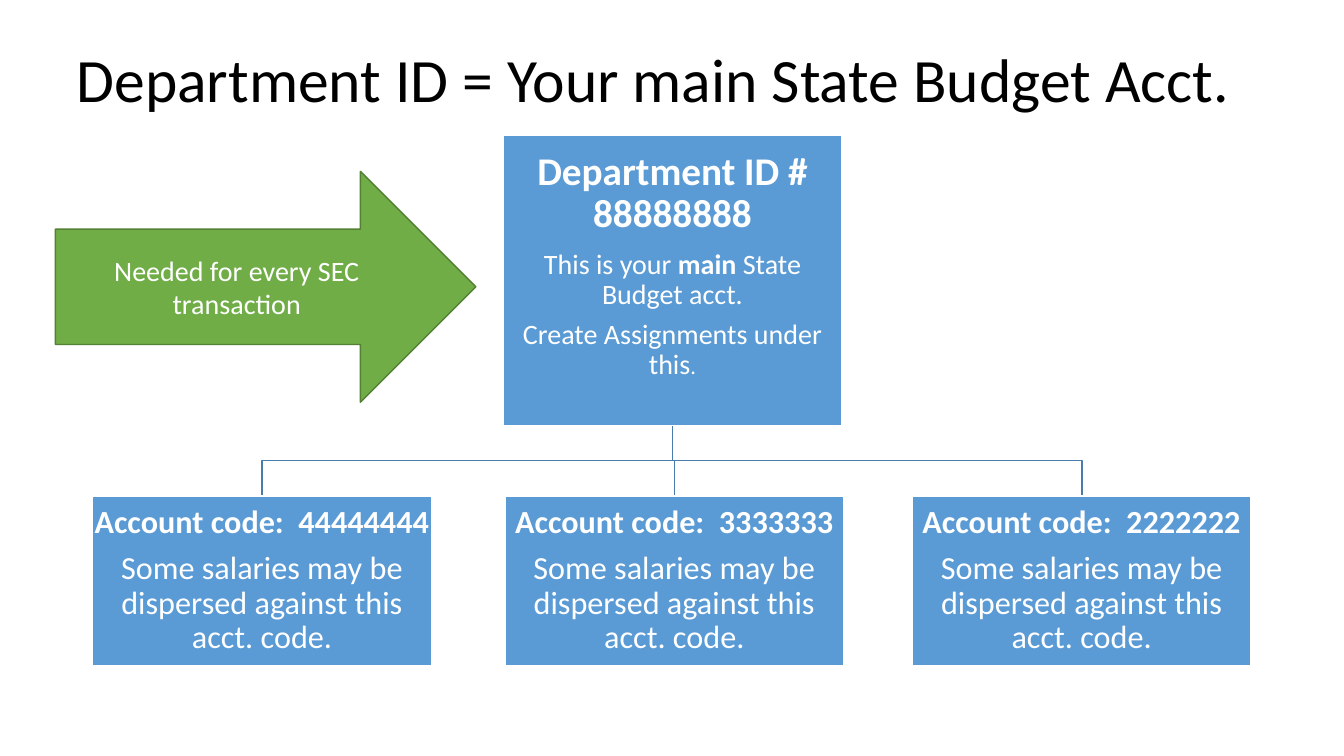
from pptx import Presentation
from pptx.dml.color import RGBColor
from pptx.enum.shapes import MSO_SHAPE as SHAPE
from pptx.enum.text import MSO_ANCHOR as ANCHOR, MSO_AUTO_SIZE as AUTO, PP_ALIGN as ALIGN
from pptx.util import Inches, Pt

BLACK = RGBColor(0x00, 0x00, 0x00)
WHITE = RGBColor(0xFF, 0xFF, 0xFF)
BLUE = RGBColor(0x5B, 0x9B, 0xD5)
LINK_BLUE = RGBColor(0x49, 0x7C, 0xAB)
GREEN = RGBColor(0x70, 0xAD, 0x47)
DARK_GREEN = RGBColor(0x53, 0x80, 0x35)

BOX_W = 3.36
ROOT_X, ROOT_Y, ROOT_H = 4.99, 1.34, 2.88
ACCOUNT_Y, ACCOUNT_H = 4.92, 1.68
ACCOUNTS = [(0.92, "44444444"), (5.01, "3333333"), (9.05, "2222222")]


class SlideBuilder:
    font = "Calibri"

    def __init__(self, prs):
        self.slide = prs.slides.add_slide(prs.slide_layouts[5])

    def style(self, p, size, color, align, bold=None):
        p.alignment = align
        p.font.name = self.font
        p.font.size = Pt(size)
        p.font.color.rgb = color
        p.font.bold = bold

    def title(self, text, x, y, w, h):
        sp = self.slide.shapes.title
        sp.left, sp.top, sp.width, sp.height = map(Inches, (x, y, w, h))
        tf = sp.text_frame
        tf.text = text
        tf.auto_size = AUTO.NONE
        tf.vertical_anchor = ANCHOR.MIDDLE
        p = tf.paragraphs[0]
        self.style(p, 44, BLACK, ALIGN.LEFT)
        p.line_spacing = 0.9

    def shape(self, kind, x, y, w, h, fill, line):
        sp = self.slide.shapes.add_shape(kind, *map(Inches, (x, y, w, h)))
        sp.shadow.inherit = False
        sp.fill.solid()
        sp.fill.fore_color.rgb = fill
        sp.line.color.rgb = line
        sp.line.width = Pt(1)
        sp.text_frame.word_wrap = True
        sp.text_frame.vertical_anchor = ANCHOR.MIDDLE
        return sp

    def arrow(self, text, x, y, w, h):
        sp = self.shape(SHAPE.RIGHT_ARROW, x, y, w, h, GREEN, DARK_GREEN)
        sp.text_frame.text = text
        self.style(sp.text_frame.paragraphs[0], 20, WHITE, ALIGN.CENTER)

    def box(self, x, y, h, paragraphs, bottom=0.02):
        tf = self.shape(SHAPE.RECTANGLE, x, y, BOX_W, h, BLUE, WHITE).text_frame
        tf.margin_left = tf.margin_right = 0
        tf.margin_top = Inches(0.02)
        tf.margin_bottom = Inches(bottom)
        for i, (size, bold, runs) in enumerate(paragraphs):
            p = tf.add_paragraph() if i else tf.paragraphs[0]
            self.style(p, size, WHITE, ALIGN.CENTER, bold)
            p.line_spacing = 0.9
            p.space_after = Pt(round(size * 0.35))
            for text, run_size, run_bold in runs:
                r = p.add_run()
                r.text = text
                if run_size:
                    r.font.size = Pt(run_size)
                if run_bold:
                    r.font.bold = True

    def branch(self, x1, y1, x2, y2):
        mid = (y1 + y2) / 2
        points = [(Inches(x), Inches(y)) for x, y in
                  [(x1, y1), (x1, mid), (x2, mid), (x2, y2)]]
        builder = self.slide.shapes.build_freeform(*points[0])
        builder.add_line_segments(points[1:], close=False)
        sp = builder.convert_to_shape()
        sp.shadow.inherit = False
        sp.fill.background()
        sp.line.color.rgb = LINK_BLUE
        sp.line.width = Pt(1)


def main():
    prs = Presentation()
    prs.slide_width, prs.slide_height = Inches(13.33), Inches(7.5)
    s = SlideBuilder(prs)
    s.title("Department ID = Your main State Budget Acct.", 0.66, 0.09, 11.7, 1.45)

    half = BOX_W / 2
    for x, _ in reversed(ACCOUNTS):
        s.branch(ROOT_X + half, ROOT_Y + ROOT_H, x + half, ACCOUNT_Y)

    s.box(ROOT_X, ROOT_Y, ROOT_H, [
        (28, True, [("Department ID # 88888888", None, False)]),
        (20, False, [("This is your ", None, False), ("main", None, True),
                     (" State Budget acct.", None, False)]),
        (20, False, [("Create Assignments under this", None, False),
                     (".", 16, False)]),
    ], bottom=0.3)
    for x, code in ACCOUNTS:
        s.box(x, ACCOUNT_Y, ACCOUNT_H, [
            (23, True, [(f"Account code:  {code}", None, False)]),
            (23, False, [("Some salaries may be dispersed against this acct. code.",
                          None, False)]),
        ])

    s.arrow("Needed for every SEC transaction", 0.55, 1.7, 4.17, 2.29)
    prs.save("out.pptx")


if __name__ == "__main__":
    main()
